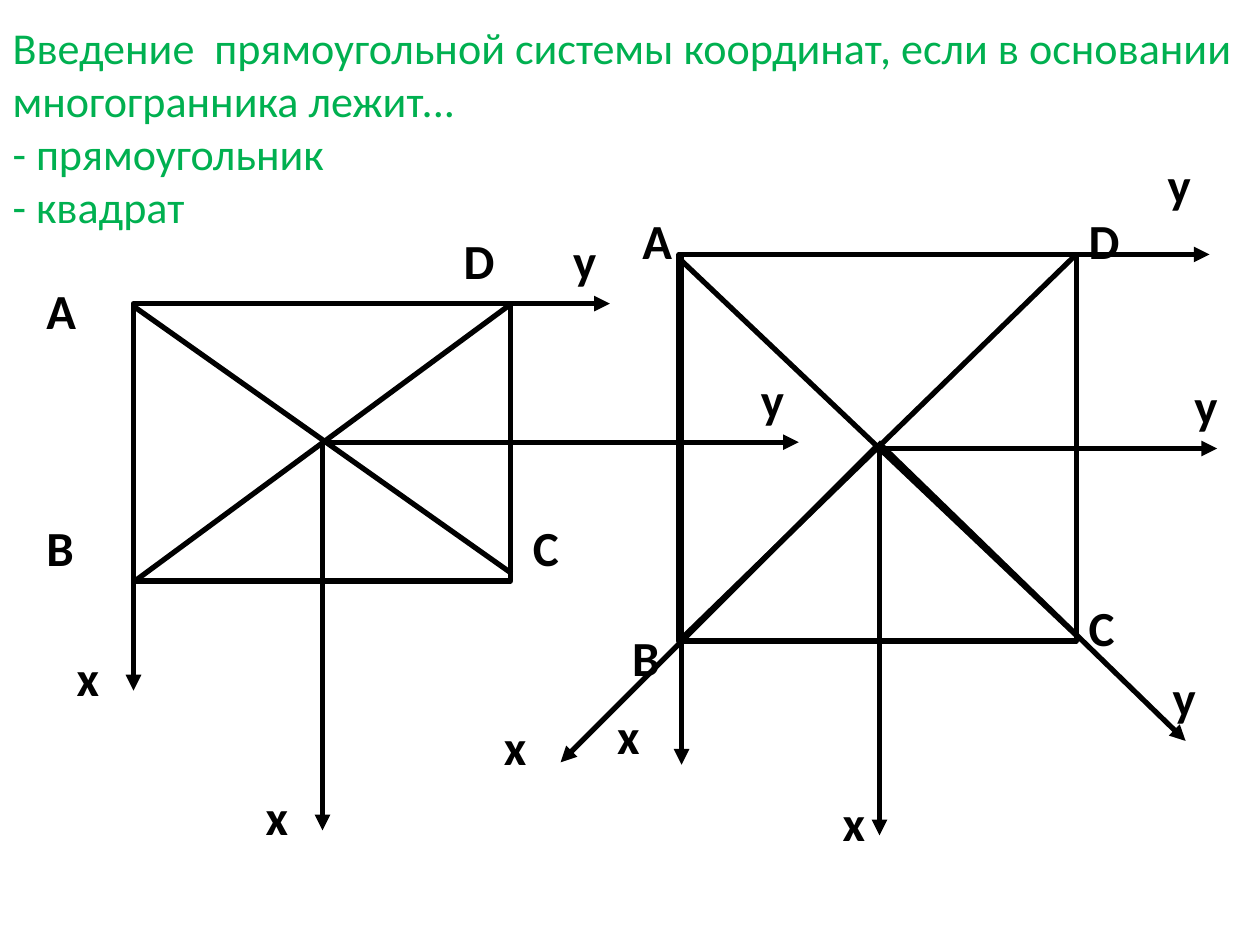
from lxml.etree import SubElement
from pptx import Presentation
from pptx.dml.color import RGBColor
from pptx.enum.shapes import MSO_CONNECTOR, MSO_SHAPE
from pptx.enum.text import MSO_ANCHOR, MSO_AUTO_SIZE, PP_ALIGN
from pptx.oxml.ns import qn
from pptx.util import Pt

COLORS = {"title": "00B050", "ink": "000000"}
TITLE = ("Введение  прямоугольной системы координат, если в основании "
         "многогранника лежит...\v- прямоугольник\v- квадрат")


class Board:
    """Holds the style and the slide on which the figures are drawn."""

    def __init__(self, slide):
        self.slide = slide
        self.shapes = slide.shapes
        self.face = "Calibri"
        self.stroke = Pt(3)

    def color(self, name):
        return RGBColor.from_string(COLORS[name])

    def style(self, frame, size, color, bold):
        for run in frame.paragraphs[0].runs:
            font = run.font
            font.name, font.size, font.bold = self.face, Pt(size), bold
            font.color.rgb = self.color(color)

    def title(self, text, left, top, width, height):
        shape = self.shapes.title
        shape.left, shape.top = Pt(left), Pt(top)
        shape.width, shape.height = Pt(width), Pt(height)
        frame = shape.text_frame
        frame.text = text
        frame.word_wrap = True
        frame.auto_size = MSO_AUTO_SIZE.NONE
        frame.vertical_anchor = MSO_ANCHOR.MIDDLE
        frame.paragraphs[0].alignment = PP_ALIGN.LEFT
        self.style(frame, 25.2, "title", False)

    def label(self, text, left, top, width):
        box = self.shapes.add_textbox(Pt(left), Pt(top), Pt(width), Pt(41))
        frame = box.text_frame
        frame.word_wrap = True
        frame.auto_size = MSO_AUTO_SIZE.SHAPE_TO_FIT_TEXT
        frame.text = text
        self.style(frame, 28, "ink", True)

    def labels(self, width, spots):
        for text, left, top in spots:
            self.label(text, left, top, width)

    def rect(self, left, top, width, height):
        shape = self.shapes.add_shape(
            MSO_SHAPE.RECTANGLE, Pt(left), Pt(top), Pt(width), Pt(height))
        shape.shadow.inherit = False
        shape.fill.background()
        shape.line.color.rgb = self.color("ink")
        shape.line.width = self.stroke

    def line(self, start, end, arrow=False):
        link = self.shapes.add_connector(
            MSO_CONNECTOR.STRAIGHT, *(Pt(v) for v in (*start, *end)))
        link.line.color.rgb = self.color("ink")
        link.line.width = self.stroke
        if arrow:
            SubElement(link.line._get_or_add_ln(), qn("a:tailEnd"), type="triangle")
        SubElement(link._element.spPr, qn("a:effectLst"))

    def axes(self, left, top, right, bottom):
        self.line((left, top), (left, bottom), arrow=True)
        self.line((left, top), (right, top), arrow=True)


def main():
    deck = Presentation()
    deck.slide_width, deck.slide_height = Pt(720), Pt(540)
    board = Board(deck.slides.add_slide(deck.slide_layouts[5]))
    board.title(TITLE, 0, 44.6, 720, 55.4)

    board.rect(76.3, 173.5, 215.5, 158.5)
    board.labels(51, [("A", 19.4, 157), ("D", 257.8, 128), ("B", 19.4, 292.3),
                      ("C", 297.4, 292.3), ("x", 36.7, 366.5), ("y", 320.4, 128),
                      ("x", 144.7, 445.7), ("y", 427.7, 207.4)])
    board.axes(76.3, 173.5, 348.5, 394.6)
    board.axes(184.3, 252.7, 456.5, 474.5)
    board.line((76.3, 175), (292.3, 327.6))
    board.line((76.3, 332.6), (292.3, 173.5))

    board.rect(388, 145.4, 227, 221)
    board.labels(45, [("A", 360, 116.6), ("B", 354.2, 355),
                      ("C", 615, 337.7), ("D", 615, 116.6)])
    board.labels(57, [("x", 345.6, 399.6), ("y", 660.2, 85),
                      ("x", 280.8, 406), ("y", 663, 378)])
    board.labels(36, [("x", 474.5, 449.3), ("y", 675.4, 211)])
    board.axes(389.5, 145.4, 691.2, 437)
    board.axes(502.6, 256.3, 695.5, 477.4)
    board.line((388, 147.6), (615, 363))
    board.line((388, 366.4), (615, 145.4))
    board.line((501.8, 254.2), (320.4, 435.6), arrow=True)
    board.line((501.8, 252.7), (677.5, 423.4), arrow=True)
    deck.save("out.pptx")


if __name__ == "__main__":
    main()
